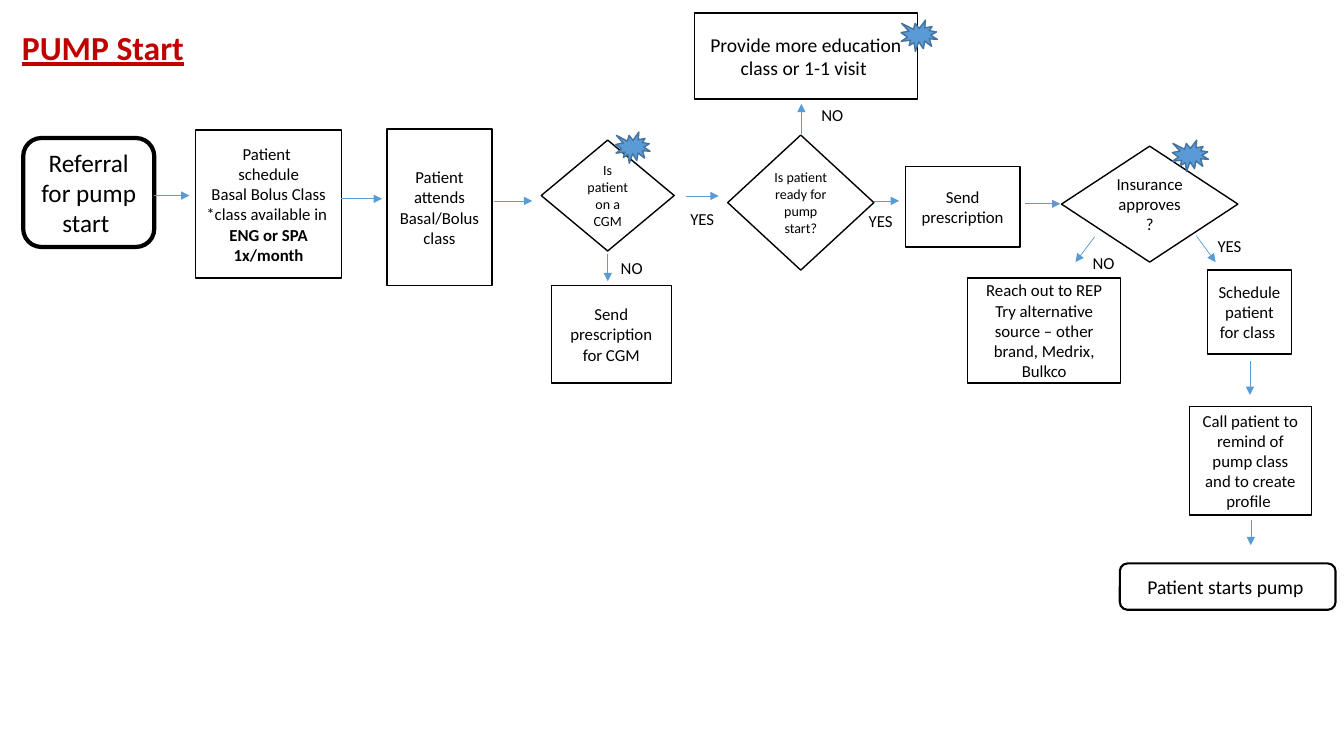
"""Build the PUMP Start patient flowchart slide."""
from lxml import etree
from pptx import Presentation
from pptx.dml.color import RGBColor
from pptx.enum.shapes import MSO_CONNECTOR, MSO_SHAPE
from pptx.enum.text import MSO_ANCHOR, MSO_AUTO_SIZE, PP_ALIGN
from pptx.oxml.ns import qn
from pptx.util import Pt

RECTANGLE = MSO_SHAPE.RECTANGLE
ROUNDED = MSO_SHAPE.ROUNDED_RECTANGLE
DIAMOND = MSO_SHAPE.DIAMOND
BURST = MSO_SHAPE.EXPLOSION1
STRAIGHT = MSO_CONNECTOR.STRAIGHT
MIDDLE = MSO_ANCHOR.MIDDLE
FIT_SHAPE = MSO_AUTO_SIZE.SHAPE_TO_FIT_TEXT
LEFT, CENTER = PP_ALIGN.LEFT, PP_ALIGN.CENTER
BLACK = RGBColor(0x00, 0x00, 0x00)
WHITE = RGBColor(0xFF, 0xFF, 0xFF)
RED = RGBColor(0xC0, 0x00, 0x00)
BLUE = RGBColor(0x5B, 0x9B, 0xD5)
DARK_BLUE = RGBColor(0x43, 0x73, 0x9E)


def write_text(box, text, size, align, color=BLACK, **extra):
    """Fill a box with paragraphs in one format."""
    box.text_frame.word_wrap = True
    box.text_frame.text = text
    font_format = {"name": "Calibri", "size": Pt(size), "bold": False} | extra
    for para in box.text_frame.paragraphs:
        para.alignment = align
        for span in para.runs:
            span.font.color.rgb = color
            for name, value in font_format.items():
                setattr(span.font, name, value)


def add_outlined(kind, bounds, fill, line, weight):
    """Add a filled, outlined shape without shadow."""
    shape = page.shapes.add_shape(kind, *map(Pt, bounds))
    shape.shadow.inherit = False
    shape.fill.solid()
    shape.fill.fore_color.rgb = fill
    shape.line.color.rgb = line
    shape.line.width = Pt(weight)
    return shape


deck = Presentation()
deck.slide_width, deck.slide_height = Pt(960), Pt(540)
page = deck.slides.add_slide(deck.slide_layouts[6])

class_text = "Patient \nschedule\nBasal Bolus Class\n*class available in \nENG or SPA 1x/month"
source_text = "Reach out to REP\nTry alternative source – other brand, Medrix, Bulkco"
steps = [
    (ROUNDED, (16.6, 98.6, 93.6, 77.8), 3, 18, "Referral for pump start "),
    (RECTANGLE, (139.7, 92.9, 104.4, 105.8), 1, 12, class_text),
    (RECTANGLE, (276.5, 92.2, 74.9, 111.6), 1, 12, "Patient attends Basal/Bolus class"),
    (DIAMOND, (386.6, 100.1, 95, 79.2), 1, 10, "Is patient on a CGM"),
    (RECTANGLE, (393.8, 203.8, 85.7, 69.8), 1, 12, "Send prescription for CGM"),
    (DIAMOND, (519.8, 96.5, 104.4, 96.5), 1, 10, "Is patient ready for pump start?"),
    (RECTANGLE, (496.1, 9.4, 159.1, 61.2), 1, 14, "Provide more education class or 1-1 visit "),
    (RECTANGLE, (646.6, 118.8, 82.1, 57.6), 1, 12, "Send prescription"),
    (DIAMOND, (758.2, 104.4, 126, 82.8), 1, 12, "Insurance approves?"),
    (RECTANGLE, (691.2, 198.7, 109.4, 74.9), 1, 12, source_text),
    (RECTANGLE, (862.6, 193, 59.8, 59.8), 1, 12, "Schedule patient for class "),
    (RECTANGLE, (849.6, 290.2, 87.1, 77.8), 1, 12, "Call patient to remind of pump class and to create profile "),
    (ROUNDED, (799.9, 402.5, 154.1, 33.1), 1.5, 14, "Patient starts pump "),
]
for kind, bounds, weight, size, text in steps:
    step = add_outlined(kind, bounds, WHITE, BLACK, weight)
    step.text_frame.vertical_anchor = MIDDLE
    write_text(step, text, size, CENTER)
    if text == class_text:
        step.text_frame.paragraphs[-1].runs[0].font.bold = True

arrows = [
    (110.2, 139.7, 135.4, 139.7),
    (243.4, 142, 272.9, 142),
    (352.8, 143.5, 380.2, 143.5),
    (434.2, 181.4, 434.2, 200.9),
    (490.3, 140, 513.4, 140),
    (572.4, 95.8, 572.4, 74.2),
    (624.2, 143.5, 642.2, 143.5),
    (732.2, 145.6, 757.4, 145.6),
    (781.9, 169.2, 768.2, 187.2),
    (854.6, 168.5, 868.3, 187.2),
    (892.8, 257.8, 892.8, 282.2),
    (893.5, 371.5, 893.5, 389.5),
]
for ends in arrows:
    arrow = page.shapes.add_connector(STRAIGHT, *map(Pt, ends))
    arrow.line.color.rgb = BLUE
    arrow.line.width = Pt(0.5)
    etree.SubElement(arrow.line._get_or_add_ln(), qn("a:tailEnd"), type="triangle")
    etree.SubElement(arrow._element.spPr, qn("a:effectLst"))

labels = [
    ("NO", 436.3, 180.7, 30.2),
    ("YES", 486, 145.4, 38.9),
    ("NO", 579.6, 71.3, 45.4),
    ("YES", 613.4, 146.9, 45.4),
    ("NO", 773.3, 177.1, 36.7),
    ("YES", 862.6, 164.9, 49),
]
for text, left, top, width in labels:
    label = page.shapes.add_textbox(Pt(left), Pt(top), Pt(width), Pt(21.6))
    label.text_frame.auto_size = FIT_SHAPE
    write_text(label, text, 12, LEFT)

for left, top, width in [(439.9, 94.3, 24.5), (643.7, 14.4, 25.9), (837.4, 100.1, 25.9)]:
    add_outlined(BURST, (left, top, width, 22.3), BLUE, DARK_BLUE, 1)

title = page.shapes.add_textbox(Pt(8.6), Pt(15.8), Pt(462.2), Pt(36))
title.text_frame.auto_size = FIT_SHAPE
write_text(title, "PUMP Start", 24, LEFT, RED, bold=True, underline=True)

deck.save("out.pptx")
